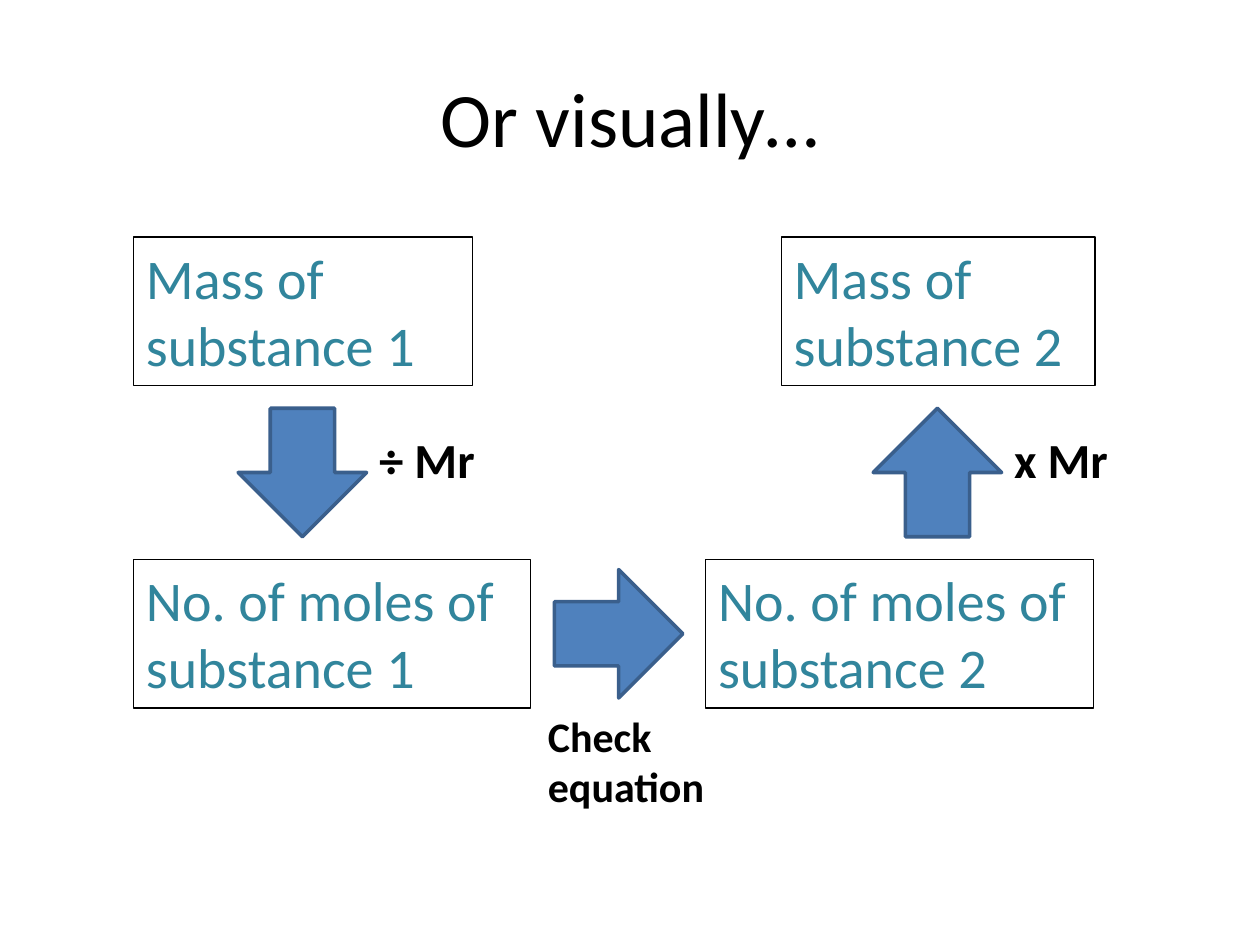
from pptx import Presentation
from pptx.dml.color import RGBColor
from pptx.enum.shapes import MSO_SHAPE
from pptx.enum.text import MSO_ANCHOR, MSO_AUTO_SIZE, PP_ALIGN
from pptx.util import Inches, Pt

COLORS = {"ink": "000000", "teal": "31859C", "blue": "4F81BD", "edge": "3A5F8C"}
TOP, LOW = 1.88, 4.44
BOX_H = 1.18
ARROW = 1.02


def color(name):
    return RGBColor.from_string(COLORS[name])


def write(frame, text, size, ink="ink", bold=False, align=PP_ALIGN.LEFT,
          anchor=MSO_ANCHOR.TOP, fit=MSO_AUTO_SIZE.SHAPE_TO_FIT_TEXT):
    frame.word_wrap = True
    frame.auto_size = fit
    frame.vertical_anchor = anchor
    para = frame.paragraphs[0]
    para.alignment = align
    run = para.add_run()
    run.text = text
    font = run.font
    font.name, font.size, font.bold = "Calibri", Pt(size), bold
    font.color.rgb = color(ink)


def add_title(slide, text):
    title = slide.shapes.title
    title.left, title.top = Inches(0.5), Inches(0.3)
    title.width, title.height = Inches(9), Inches(1.25)
    write(title.text_frame, text, 44, align=PP_ALIGN.CENTER,
          anchor=MSO_ANCHOR.MIDDLE, fit=MSO_AUTO_SIZE.NONE)


def add_form(slide, kind, left, top, width, height, edge, weight):
    form = slide.shapes.add_shape(kind, Inches(left), Inches(top),
                                  Inches(width), Inches(height))
    form.shadow.inherit = False
    form.line.color.rgb = color(edge)
    form.line.width = Pt(weight)
    return form


def add_box(slide, text, left, top, width):
    box = add_form(slide, MSO_SHAPE.RECTANGLE, left, top, width, BOX_H, "ink", 0.75)
    box.fill.background()
    write(box.text_frame, text, 32, ink="teal")


def add_arrow(slide, left, top, turn):
    arrow = add_form(slide, MSO_SHAPE.RIGHT_ARROW, left, top, ARROW, ARROW, "edge", 2)
    arrow.fill.solid()
    arrow.fill.fore_color.rgb = color("blue")
    arrow.rotation = turn


def add_label(slide, text, left, top, width, height, size):
    label = slide.shapes.add_textbox(Inches(left), Inches(top),
                                     Inches(width), Inches(height))
    write(label.text_frame, text, size, bold=True)


def main():
    deck = Presentation()
    deck.slide_width, deck.slide_height = Inches(10), Inches(7.5)
    slide = deck.slides.add_slide(deck.slide_layouts[5])
    add_title(slide, "Or visually…")

    for text, left, top, width in (
        ("Mass of substance 1", 1.06, TOP, 2.69),
        ("No. of moles of substance 1", 1.06, LOW, 3.15),
        ("No. of moles of substance 2", 5.6, LOW, 3.08),
        ("Mass of substance 2", 6.2, TOP, 2.49),
    ):
        add_box(slide, text, left, top, width)

    mid = (TOP + BOX_H + LOW - ARROW) / 2
    for left, turn, text in ((1.89, 90, "÷ Mr"), (6.93, 270, "x Mr")):
        add_arrow(slide, left, mid, turn)
        add_label(slide, text, left + ARROW, 3.36, 0.98, 0.57, 28)

    add_arrow(slide, 4.4, LOW + (BOX_H - ARROW) / 2, 0)
    add_label(slide, "Check equation", 4.25, 5.59, 1.77, 0.91, 24)
    deck.save("out.pptx")


if __name__ == "__main__":
    main()
